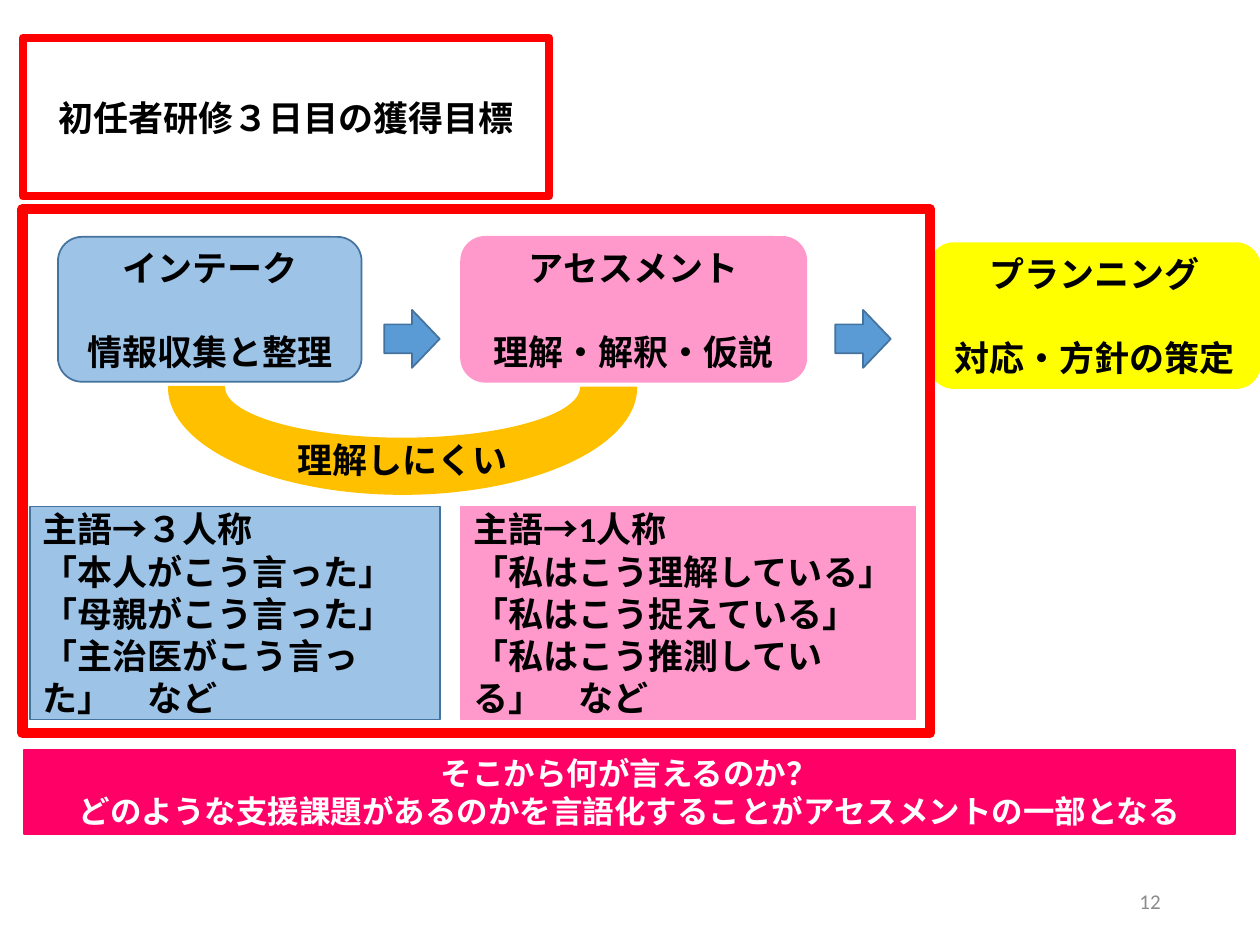
from dataclasses import dataclass

from pptx import Presentation
from pptx.dml.color import RGBColor as RGB
from pptx.enum.shapes import MSO_SHAPE as Kind
from pptx.enum.text import MSO_ANCHOR as Anchor, PP_ALIGN as Align
from pptx.util import Inches, Pt


@dataclass(frozen=True)
class Theme:
    font: str = "Calibri"
    body: int = 20
    note: int = 18
    small: int = 12
    black: str = "000000"
    white: str = "FFFFFF"
    gray: str = "8C8C8C"
    red: str = "FF0000"
    sky: str = "9DC3E6"
    blue: str = "5B9BD5"
    navy: str = "43739E"
    pink: str = "FF99CC"
    yellow: str = "FFFF00"
    gold: str = "FFC000"
    rose: str = "FF0066"


class Deck:
    def __init__(self, theme):
        self.theme = theme
        self.prs = Presentation()
        self.prs.slide_width = Inches(10)
        self.prs.slide_height = Inches(7.5)
        self.slide = self.prs.slides.add_slide(self.prs.slide_layouts[6])

    def shape(self, kind, box, fill=None, line=None, width=1):
        item = self.slide.shapes.add_shape(kind, *map(Inches, box))
        item.shadow.inherit = False
        if fill:
            item.fill.solid()
            item.fill.fore_color.rgb = RGB.from_string(fill)
        else:
            item.fill.background()
        item.line.color.rgb = RGB.from_string(line or fill)
        item.line.width = Pt(width)
        return item

    def style(self, item, text, size=None, color=None, align=Align.CENTER,
              bold=True, gap=0):
        frame = item.text_frame
        frame.word_wrap = True
        frame.vertical_anchor = Anchor.MIDDLE
        frame.text = text
        for i, para in enumerate(frame.paragraphs):
            para.alignment = align
            if i and gap:
                para.space_before = Pt(gap)
            for run in para.runs:
                font = run.font
                font.name = self.theme.font
                font.size = Pt(size or self.theme.body)
                font.bold = bold
                font.color.rgb = RGB.from_string(color or self.theme.black)

    def panel(self, box, text, fill, line=None, width=1, **look):
        item = self.shape(Kind.RECTANGLE, box, fill, line, width)
        self.style(item, text, **look)

    def card(self, box, text, fill, line=None):
        item = self.shape(Kind.ROUNDED_RECTANGLE, box, fill, line)
        self.style(item, text, gap=24)

    def arrow(self, left):
        self.shape(Kind.RIGHT_ARROW, (left, 2.46, 0.44, 0.46),
                   self.theme.blue, self.theme.navy)

    def arc(self, box, fill):
        item = self.shape(Kind.BLOCK_ARC, box, fill)
        item.rotation = 180
        for i, value in enumerate((108, 0.12, 0.26)):
            item.adjustments[i] = value

    def label(self, box, text, **look):
        item = self.slide.shapes.add_textbox(*map(Inches, box))
        self.style(item, text, **look)


def main():
    theme = Theme()
    deck = Deck(theme)

    # Title
    deck.panel((0.18, 0.3, 4.18, 1.26), "初任者研修３日目の獲得目標",
               theme.white, theme.red, 4.5)

    # Three steps and the arrows between them
    deck.card((0.46, 1.88, 2.41, 1.15), "インテーク\n情報収集と整理",
              theme.sky, theme.navy)
    deck.arrow(3.05)
    deck.card((3.66, 1.88, 2.74, 1.15), "アセスメント\n理解・解釈・仮説",
              theme.pink)
    deck.arrow(6.63)
    deck.card((7.38, 1.93, 2.62, 1.15), "プランニング\n対応・方針の策定",
              theme.yellow)

    # Arc linking the first two steps
    deck.arc((1.34, 2.23, 3.71, 1.69), theme.gold)
    deck.panel((2.21, 3.5, 1.97, 0.29), "理解しにくい", theme.gold)

    # Examples under each step
    deck.panel((0.24, 4.02, 3.25, 1.69),
               "主語→３人称\n「本人がこう言った」\n「母親がこう言った」\n"
               "「主治医がこう言った」　など",
               theme.sky, theme.navy, align=Align.LEFT)
    deck.panel((3.66, 4.02, 3.6, 1.69),
               "主語→1人称\n「私はこう理解している」\n「私はこう捉えている」\n"
               "「私はこう推測している」　など",
               theme.pink, align=Align.LEFT)

    # Conclusion
    deck.panel((0.19, 5.95, 9.61, 0.67),
               "そこから何が言えるのか？\n"
               "どのような支援課題があるのかを言語化することがアセスメントの一部となる",
               theme.rose, size=theme.note, color=theme.white)

    # Frame around the day's scope
    deck.shape(Kind.RECTANGLE, (0.18, 1.66, 7.2, 4.16),
               line=theme.red, width=6)

    # Page number
    deck.label((7.06, 6.95, 2.25, 0.4), "12", size=theme.small,
               color=theme.gray, align=Align.RIGHT, bold=False)

    deck.prs.save("out.pptx")


if __name__ == "__main__":
    main()
